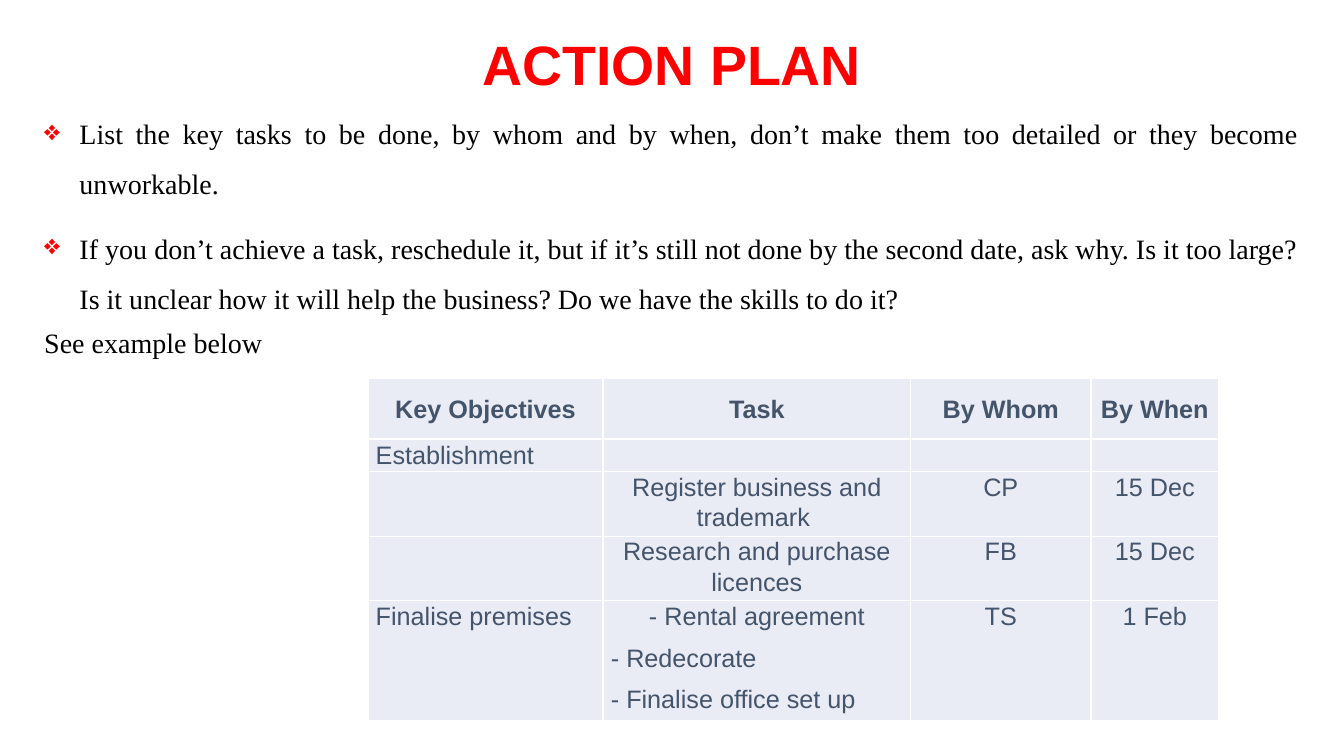
from lxml.etree import SubElement
from pptx import Presentation
from pptx.dml.color import RGBColor
from pptx.enum.text import MSO_ANCHOR as Anchor, PP_ALIGN as Align
from pptx.oxml.ns import qn
from pptx.util import Pt


def rgb(value):
    return RGBColor.from_string(value)


class ActionPlanSlide:
    heading_font = "Arial"
    body_font = "Times New Roman"
    accent = "FF0000"
    ink = "000000"
    table_ink = "44546A"
    cell_fill = "E9EBF5"
    grid = "FFFFFF"

    def __init__(self, deck):
        self.slide = deck.slides.add_slide(deck.slide_layouts[6])

    def style(self, paragraph, font, size, color, bold=False, align=Align.LEFT,
              spacing=1.0, before=0, after=0):
        paragraph.alignment = align
        paragraph.line_spacing = spacing
        paragraph.space_before = Pt(before)
        paragraph.space_after = Pt(after)
        for run in paragraph.runs:
            run.font.name = font
            run.font.size = Pt(size)
            run.font.bold = bold
            run.font.color.rgb = rgb(color)

    def text_frame(self, left, top, width, height, text, anchor=Anchor.TOP):
        frame = self.slide.shapes.add_textbox(
            Pt(left), Pt(top), Pt(width), Pt(height)).text_frame
        frame.word_wrap = True
        frame.vertical_anchor = anchor
        frame.text = text
        return frame

    def title(self, left, top, width, height, text):
        frame = self.text_frame(left, top, width, height, text, Anchor.MIDDLE)
        self.style(frame.paragraphs[0], self.heading_font, 39.6, self.accent,
                   True, Align.CENTER, 0.9)

    def bullet(self, paragraph, indent):
        properties = paragraph._p.get_or_add_pPr()
        properties.set("marL", str(Pt(indent)))
        properties.set("indent", str(-Pt(indent)))
        color = SubElement(properties, qn("a:buClr"))
        SubElement(color, qn("a:srgbClr"), val=self.accent)
        SubElement(properties, qn("a:buChar"), char="❖")

    def advice(self, left, top, width, height, points, closing):
        frame = self.text_frame(left, top, width, height,
                                "\n".join([*points, closing]))
        for index, paragraph in enumerate(frame.paragraphs):
            is_point = index < len(points)
            self.style(paragraph, self.body_font, 20, self.ink,
                       align=Align.JUSTIFY, spacing=1.5 if is_point else 0.9,
                       before=10 if index else 0)
            if is_point:
                self.bullet(paragraph, 25.2)

    def borders(self, cell):
        properties = cell._tc.get_or_add_tcPr()
        for side in ("a:lnL", "a:lnR", "a:lnT", "a:lnB"):
            line = SubElement(properties, qn(side), w=str(Pt(1)))
            fill = SubElement(line, qn("a:solidFill"))
            SubElement(fill, qn("a:srgbClr"), val=self.grid)

    def cell(self, cell, text, row, column):
        self.borders(cell)
        cell.fill.solid()
        cell.fill.fore_color.rgb = rgb(self.cell_fill)
        cell.margin_left = cell.margin_right = Pt(5.6)
        cell.margin_top = cell.margin_bottom = 0
        cell.vertical_anchor = Anchor.MIDDLE if row < 2 else Anchor.TOP
        cell.text = text
        for index, paragraph in enumerate(cell.text_frame.paragraphs):
            centered = index == 0 and (row == 0 or column > 0)
            self.style(paragraph, self.heading_font, 18, self.table_ink,
                       row == 0, Align.CENTER if centered else Align.LEFT,
                       1.07, after=3 if row < 2 else 8)

    def table(self, left, top, widths, heights, rows):
        table = self.slide.shapes.add_table(
            len(rows), len(widths), Pt(left), Pt(top),
            Pt(sum(widths)), Pt(sum(heights))).table
        table.first_row = table.horz_banding = False
        for column, width in zip(table.columns, widths):
            column.width = Pt(width)
        for row, height in zip(table.rows, heights):
            row.height = Pt(height)
        for r, texts in enumerate(rows):
            for c, text in enumerate(texts):
                self.cell(table.cell(r, c), text, r, c)


def main():
    deck = Presentation()
    deck.slide_width, deck.slide_height = Pt(960), Pt(540)
    plan = ActionPlanSlide(deck)
    plan.title(66, 28.8, 828, 38.9, "ACTION PLAN")
    plan.advice(24.5, 67.7, 910, 437.8, [
        "List the key tasks to be done, by whom and by when, don’t make them "
        "too detailed or they become unworkable. ",
        "If you don’t achieve a task, reschedule it, but if it’s still not done "
        "by the second date, ask why. Is it too large? Is it unclear how it will "
        "help the business? Do we have the skills to do it? ",
    ], "See example below")
    plan.table(262.8, 270, [168, 219.6, 129, 91], [43.6, 21.2, 43.2, 43.2, 84], [
        ["Key Objectives", "Task", "By Whom", "By When"],
        ["Establishment", "", "", ""],
        ["", "Register business and trademark ", "CP", "15 Dec"],
        ["", "Research and purchase licences", "FB", "15 Dec"],
        ["Finalise premises",
         "- Rental agreement\n- Redecorate\n- Finalise office set up",
         "TS", "1 Feb"],
    ])
    deck.save("out.pptx")


if __name__ == "__main__":
    main()
